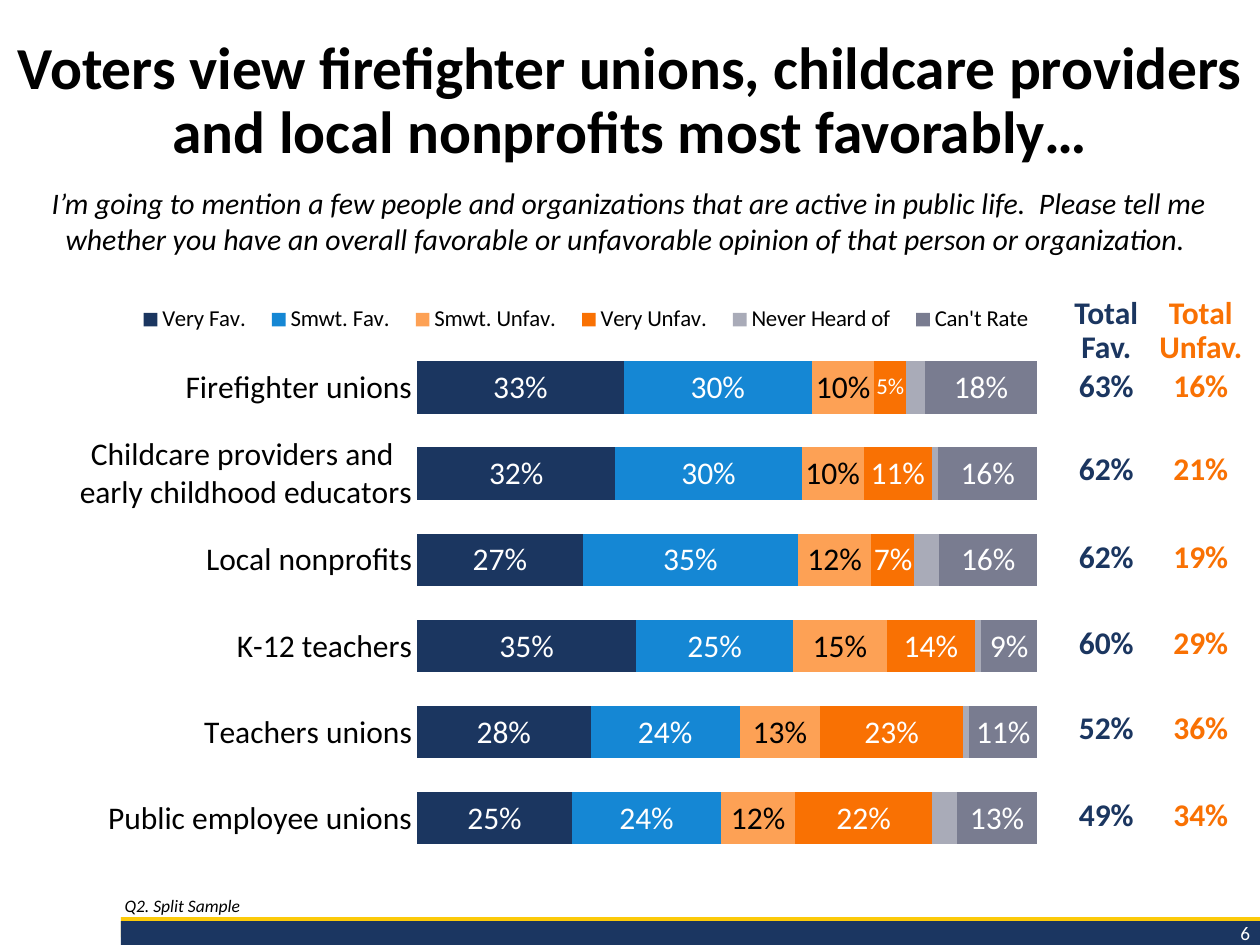
import pptx
import pptx.chart.data
import pptx.dml.color
import pptx.enum.chart
import pptx.enum.shapes
import pptx.enum.text
import pptx.oxml
import pptx.oxml.ns
import pptx.util

THEME = {
    "font": "Calibri",
    "black": "000000", "white": "FFFFFF", "navy": "1B3660", "band": "1B3661", "gold": "FCCA09",
    "blue": "1587D4", "peach": "FDA155", "orange": "F97103", "silver": "A9ABB8", "slate": "797C90",
    "title": 34, "question": 17, "data": 18, "legend": 13, "page": 11, "note": 10,
}
ALIGN = pptx.enum.text.PP_ALIGN
ANCHOR = pptx.enum.text.MSO_ANCHOR

presentation = pptx.Presentation()
presentation.slide_width = pptx.util.Inches(10)
presentation.slide_height = pptx.util.Inches(7.5)
slide = presentation.slides.add_slide(presentation.slide_layouts[6])
COLUMN = presentation.slide_width / 100
ROW = presentation.slide_height / 75


def style(font, size, color, bold=False, italic=False):
    font.name = THEME["font"]
    font.size = pptx.util.Pt(THEME[size])
    font.color.rgb = pptx.dml.color.RGBColor.from_string(THEME[color])
    font.bold, font.italic = bold, italic


def set_layout(parent, index, left, top, width, height, target=""):
    """Pin a chart part to shares of the chart's size."""
    for old in parent.findall(pptx.oxml.ns.qn("c:layout")):
        parent.remove(old)
    parent.insert(index, pptx.oxml.parse_xml(
        f'<c:layout {pptx.oxml.ns.nsdecls("c")}><c:manualLayout>{target}'
        '<c:xMode val="edge"/><c:yMode val="edge"/>'
        f'<c:x val="{left}"/><c:y val="{top}"/><c:w val="{width}"/><c:h val="{height}"/>'
        '</c:manualLayout></c:layout>'))


# Footer bands
for top, height, color in [(72.8, 1.6, "gold"), (73.1, 1.9, "band")]:
    band = slide.shapes.add_shape(
        pptx.enum.shapes.MSO_SHAPE.RECTANGLE,
        int(9.6 * COLUMN), int(top * ROW), int(90.4 * COLUMN), int(height * ROW))
    band.shadow.inherit = False
    band.fill.solid()
    band.fill.fore_color.rgb = pptx.dml.color.RGBColor.from_string(THEME[color])
    band.line.fill.background()

# Title, question, note and page number
texts = [
    ("Voters view firefighter unions, childcare providers and local nonprofits most favorably…",
     (0, 2, 100, 12.2), "title", "black", True, False, ALIGN.CENTER, ANCHOR.MIDDLE, 0.9),
    ("I’m going to mention a few people and organizations that are active in public life.  "
     "Please tell me whether you have an overall favorable or unfavorable opinion of that "
     "person or organization. ",
     (1.7, 14.2, 96.5, 6.7), "question", "black", False, True, ALIGN.CENTER, ANCHOR.TOP, 1.0),
    ("Q2. Split Sample",
     (8.9, 67.8, 90.9, 5.4), "note", "black", False, True, ALIGN.LEFT, ANCHOR.BOTTOM, 0.9),
    ("6", (85.4, 72.6, 14.8, 2.9), "page", "white", False, False, ALIGN.RIGHT, ANCHOR.TOP, 1.0),
]
for text, (left, top, width, height), size, color, bold, italic, align, anchor, spacing in texts:
    box = slide.shapes.add_textbox(
        int(left * COLUMN), int(top * ROW), int(width * COLUMN), int(height * ROW))
    box.text_frame.word_wrap = True
    box.text_frame.vertical_anchor = anchor
    box.text_frame.text = text
    paragraph = box.text_frame.paragraphs[0]
    paragraph.alignment, paragraph.line_spacing = align, spacing
    style(paragraph.runs[0].font, size, color, bold, italic)

# Opinion chart: name, values, fill, label colour
opinions = [
    ("Very Fav.", (0.33, 0.32, 0.27, 0.35, 0.28, 0.25), "navy", "white"),
    ("Smwt. Fav.", (0.30, 0.30, 0.35, 0.25, 0.24, 0.24), "blue", "white"),
    ("Smwt. Unfav.", (0.10, 0.10, 0.12, 0.15, 0.13, 0.12), "peach", "black"),
    ("Very Unfav.", (0.05, 0.11, 0.07, 0.14, 0.23, 0.22), "orange", "white"),
    ("Never Heard of", (0.03, 0.01, 0.04, 0.01, 0.01, 0.04), "silver", None),
    ("Can't Rate", (0.18, 0.16, 0.16, 0.09, 0.11, 0.13), "slate", "white"),
]
chart_data = pptx.chart.data.CategoryChartData(number_format="0%")
chart_data.categories = [
    "Firefighter unions", "Childcare providers and \nearly childhood educators",
    "Local nonprofits", "K-12 teachers", "Teachers unions", "Public employee unions"]
for name, values, _, _ in opinions:
    chart_data.add_series(name, values)
chart = slide.shapes.add_chart(
    pptx.enum.chart.XL_CHART_TYPE.BAR_STACKED_100,
    int(1.7 * COLUMN), int(23.2 * ROW), int(82.2 * COLUMN), int(48.1 * ROW), chart_data).chart
style(chart.font, "data", "black")
chart.has_title = False

plot = chart.plots[0]
plot.gap_width, plot.overlap = 65, 100
plot.vary_by_categories = False
for series, (_, _, fill, label_color) in zip(plot.series, opinions):
    series.format.fill.solid()
    series.format.fill.fore_color.rgb = pptx.dml.color.RGBColor.from_string(THEME[fill])
    if label_color:
        labels = series.data_labels
        labels.show_value = True
        labels.number_format, labels.number_format_is_linked = "0%", False
        labels.position = pptx.enum.chart.XL_LABEL_POSITION.CENTER
        style(labels.font, "data", label_color)
narrow_label = plot.series[3].points[0].data_label
style(narrow_label.font, "legend", "white")
narrow_label.position = pptx.enum.chart.XL_LABEL_POSITION.CENTER

category_axis, value_axis = chart.category_axis, chart.value_axis
category_axis.reverse_order = True
category_axis.major_tick_mark = pptx.enum.chart.XL_TICK_MARK.NONE
category_axis.format.line.fill.background()
style(category_axis.tick_labels.font, "data", "black")
value_axis.minimum_scale, value_axis.maximum_scale, value_axis.major_unit = 0, 1, 0.2
value_axis.tick_labels.number_format = "0%"
value_axis.tick_labels.number_format_is_linked = False
value_axis.has_major_gridlines = False
value_axis.visible = False

chart.has_legend = True
chart.legend.position = pptx.enum.chart.XL_LEGEND_POSITION.TOP
chart.legend.include_in_layout = False
style(chart.legend.font, "legend", "black")
plot_area = chart.element.find(".//" + pptx.oxml.ns.qn("c:plotArea"))
legend = chart.element.find(".//" + pptx.oxml.ns.qn("c:legend"))
set_layout(plot_area, 0, 0.382, 0.086, 0.599, 0.853, '<c:layoutTarget val="inner"/>')
set_layout(legend, 1, 0.1, 0.02, 0.89, 0.05)

# Totals beside the bars
totals = [
    ("Total Fav.", "Total Unfav."), ("63%", "16%"), ("62%", "21%"), ("62%", "19%"),
    ("60%", "29%"), ("52%", "36%"), ("49%", "34%")]
row_heights = [6.3, 3, 6.6, 7, 6.8, 6.8, 6.9]
table = slide.shapes.add_table(
    len(totals), 2, int(84.4 * COLUMN), int(22.8 * ROW),
    int(15 * COLUMN), int(sum(row_heights) * ROW)).table
table.first_row = table.horz_banding = False
for table_column, width in zip(table.columns, (6.8, 8.2)):
    table_column.width = int(width * COLUMN)
for row_index, (row_texts, height) in enumerate(zip(totals, row_heights)):
    table.rows[row_index].height = int(height * ROW)
    for column_index, (text, color) in enumerate(zip(row_texts, ("navy", "orange"))):
        cell = table.cell(row_index, column_index)
        cell.fill.background()
        cell.margin_left = cell.margin_right = cell.margin_top = int(0.1 * COLUMN)
        cell.margin_bottom = 0
        cell.vertical_anchor = ANCHOR.BOTTOM
        cell.text_frame.text = text
        paragraph = cell.text_frame.paragraphs[0]
        paragraph.alignment = ALIGN.CENTER
        if row_index == 0:
            paragraph.line_spacing = pptx.util.Pt(19)
        style(paragraph.runs[0].font, "data", color, bold=True)

presentation.save("out.pptx")
